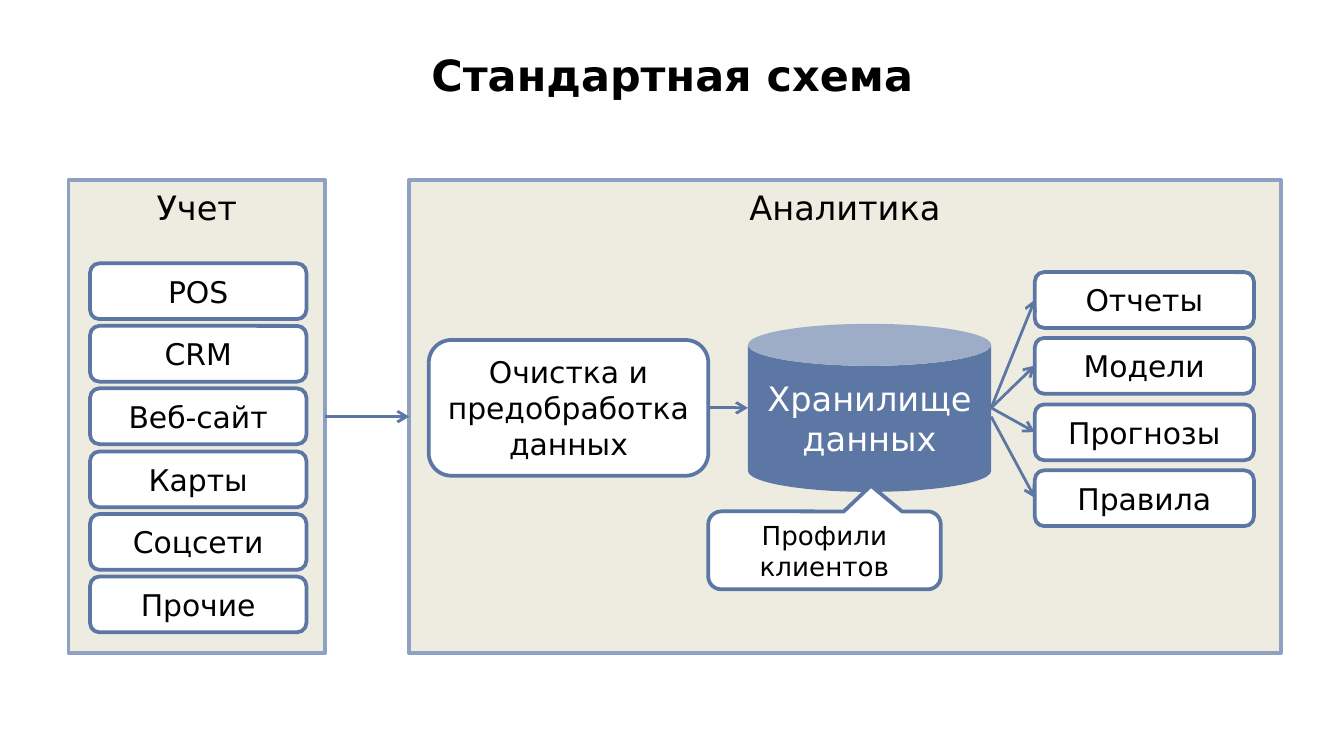
import pptx
import pptx.dml.color
import pptx.enum.shapes
import pptx.enum.text
import pptx.oxml
import pptx.oxml.ns
import pptx.util
from dataclasses import dataclass

PX = 4572  # 200 px to the inch


@dataclass(frozen=True)
class Theme:
    font: str = "DejaVu Sans"
    black: str = "000000"
    white: str = "FFFFFF"
    blue: str = "5C77A4"
    pale: str = "8EA1C2"
    sand: str = "EEECE1"
    title: int = 23
    head: int = 18
    body: int = 16
    note: int = 14


theme = Theme()
color = pptx.dml.color.RGBColor.from_string
kinds = pptx.enum.shapes.MSO_SHAPE
anchors = pptx.enum.text.MSO_ANCHOR
aligns = pptx.enum.text.PP_ALIGN

deck = pptx.Presentation()
deck.slide_width, deck.slide_height = 2000 * PX, 1125 * PX
slide = deck.slides.add_slide(deck.slide_layouts[5])


def add_box(kind, place, text, size=theme.body, fill=theme.white,
            line=theme.blue, ink=theme.black, anchor=anchors.MIDDLE, side=10):
    """Add a shape with centred text; place is left, top, width, height in px."""
    box = slide.shapes.add_shape(kind, *(n * PX for n in place))
    box.shadow.inherit = False
    box.fill.solid()
    box.fill.fore_color.rgb = color(fill)
    if line:
        box.line.color.rgb = color(line)
        box.line.width = pptx.util.Pt(2)
    else:
        box.line.fill.background()
    frame = box.text_frame
    frame.word_wrap = True
    frame.vertical_anchor = anchor
    frame.margin_left = frame.margin_right = side * PX
    frame.margin_top = frame.margin_bottom = 10 * PX
    para = frame.paragraphs[0]
    para.text = text
    para.alignment = aligns.CENTER
    para.font.name = theme.font
    para.font.size = pptx.util.Pt(size)
    para.font.color.rgb = color(ink)
    return box


def add_arrow(*ends):
    """Add an arrow; ends are x and y of the start, then of the tip, in px."""
    arrow = slide.shapes.add_connector(
        pptx.enum.shapes.MSO_CONNECTOR.STRAIGHT, *(n * PX for n in ends))
    arrow.line.color.rgb = color(theme.blue)
    arrow.line.width = pptx.util.Pt(1.5)
    line = arrow.line._get_or_add_ln()
    line.append(pptx.oxml.parse_xml(
        f'<a:tailEnd {pptx.oxml.ns.nsdecls("a")} type="arrow"/>'))
    line.addnext(pptx.oxml.parse_xml(
        f'<a:effectLst {pptx.oxml.ns.nsdecls("a")}/>'))


# Title
title = slide.shapes.title
title.left, title.top, title.width, title.height = (
    n * PX for n in (622, 58, 1328, 106))
title.text_frame.vertical_anchor = anchors.MIDDLE
para = title.text_frame.paragraphs[0]
para.text = "Стандартная схема"
para.alignment = aligns.LEFT
para.font.name = theme.font
para.font.size = pptx.util.Pt(theme.title)
para.font.bold = True
para.font.color.rgb = color(theme.black)

# Panels
for left, width, text in ((102, 382, "Учет"), (609, 1297, "Аналитика")):
    add_box(kinds.RECTANGLE, (left, 268, width, 704), text, theme.head,
            theme.sand, theme.pale, anchor=anchors.TOP)

# Sources
sources = ("POS", "CRM", "Веб-сайт", "Карты", "Соцсети", "Прочие")
for i, text in enumerate(sources):
    top = 392 + round(93.2 * i)
    add_box(kinds.ROUNDED_RECTANGLE, (134, top, 322, 83), text)
add_arrow(484, 620, 609, 620)

# Cleaning and storage
add_box(kinds.ROUNDED_RECTANGLE, (638, 506, 416, 202),
        "Очистка и предобработка данных")
add_box(kinds.CAN, (1113, 482, 362, 250), "Хранилище данных", theme.head,
        theme.blue, None, theme.white)
add_arrow(1054, 607, 1113, 607)

# Results
results = ("Отчеты", "Модели", "Прогнозы", "Правила")
for i, text in enumerate(results):
    top = 405 + round(98.4 * i)
    add_box(kinds.ROUNDED_RECTANGLE, (1540, top, 326, 83), text)
    start = 620 if text == results[-1] else 607
    add_arrow(1475, start, 1540, top + 41)

# Client profiles
callout = add_box(kinds.ROUNDED_RECTANGULAR_CALLOUT, (1054, 761, 346, 116),
                  "Профили клиентов", theme.note, side=20)
callout.adjustments[0] = 0.2
callout.adjustments[1] = -0.83

deck.save("out.pptx")
